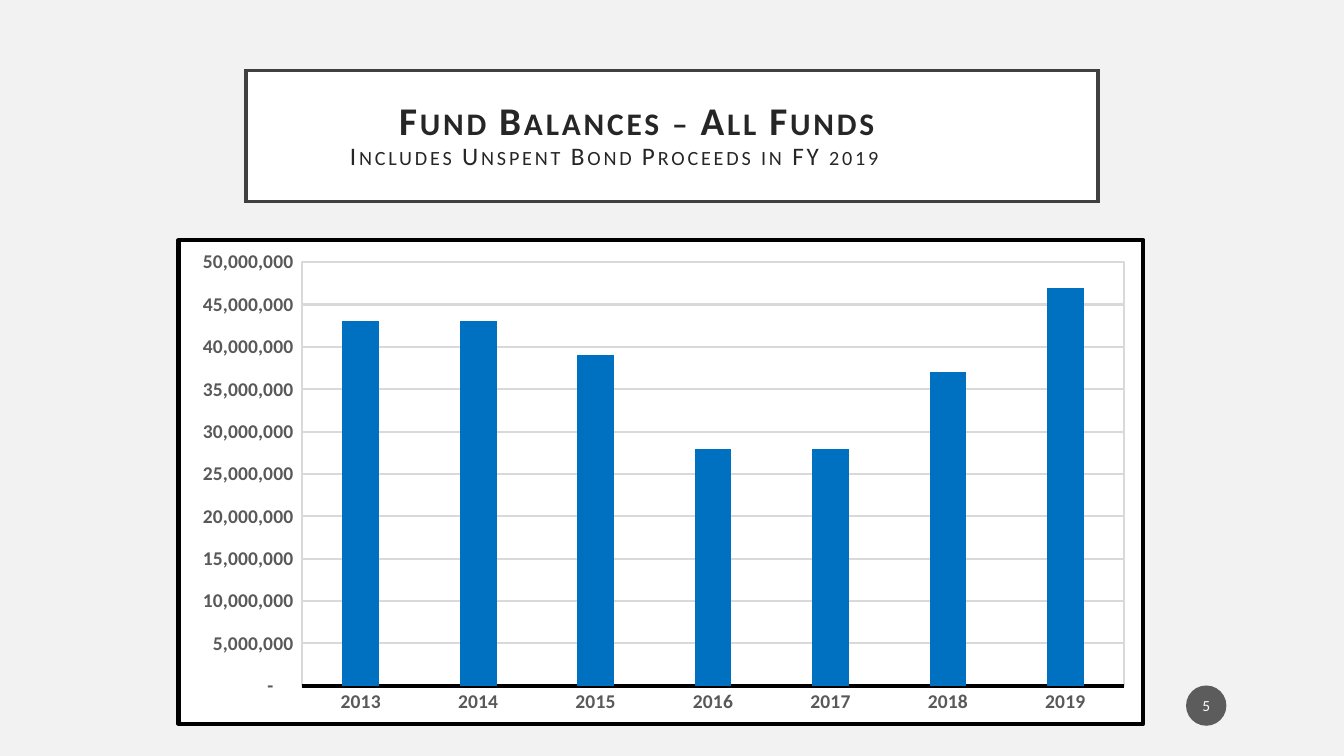
"""Build the fund balances slide: framed title, column chart and page badge."""
import lxml.etree
import pptx
import pptx.chart.data
import pptx.dml.color
import pptx.enum.chart
import pptx.enum.shapes
import pptx.enum.text
import pptx.oxml
import pptx.oxml.ns
import pptx.util

RGB = pptx.dml.color.RGBColor
Pt = pptx.util.Pt
Inch = pptx.util.Inches
qn = pptx.oxml.ns.qn
WHITE = RGB(0xFF, 0xFF, 0xFF)
BLACK = RGB(0, 0, 0)
PALE = RGB(0xF2, 0xF2, 0xF2)
FRAME = RGB(0x40, 0x40, 0x40)
INK = RGB(0x26, 0x26, 0x26)
GREY = RGB(0x59, 0x59, 0x59)
GRID = RGB(0xD9, 0xD9, 0xD9)
BLUE = RGB(0, 0x70, 0xC0)
BADGE = RGB(0x1D, 0x1D, 0x1D)
FACE = "Calibri"

deck = pptx.Presentation()
deck.slide_width, deck.slide_height = Inch(13.33), Inch(7.5)
slide = deck.slides.add_slide(deck.slide_layouts[6])
slide.background.fill.solid()
slide.background.fill.fore_color.rgb = PALE


def place(*parts):
    """Turn percent shares of the slide into left, top, width and height."""
    sides = (deck.slide_width, deck.slide_height) * 2
    return [round(side * part / 100) for side, part in zip(sides, parts)]


def style(font, size, color, bold):
    """Set face, size, colour and weight of a font."""
    font.name, font.size, font.bold = FACE, Pt(size), bold
    font.color.rgb = color


kinds = pptx.enum.shapes.MSO_SHAPE
mid = pptx.enum.text.MSO_ANCHOR.MIDDLE
center = pptx.enum.text.PP_ALIGN.CENTER

title = slide.shapes.add_shape(kinds.RECTANGLE, *place(18.3, 9.33, 63.4, 17.33))
title.shadow.inherit = False
title.fill.solid()
title.fill.fore_color.rgb = WHITE
title.line.color.rgb = FRAME
title.line.width = Pt(2.5)
edge = title._element.spPr.find(qn("a:ln"))
lxml.etree.SubElement(edge, qn("a:miter")).set("lim", "800000")
frame = title.text_frame
frame.word_wrap = True
frame.vertical_anchor = mid
frame.margin_left = frame.margin_right = Inch(0.2)
frame.margin_top = frame.margin_bottom = Inch(0.2)
lines = [("Fund Balances – All Funds", 28, True),
         ("Includes Unspent Bond Proceeds in FY 2019", 18, False)]
for row, (words, size, bold) in enumerate(lines):
    para = frame.add_paragraph() if row else frame.paragraphs[0]
    para.text = words
    para.alignment = center
    para.line_spacing = 0.9
    style(para.font, size, INK, bold)
    para.font._element.set("cap", "small")
    para.font._element.set("spc", "200")

data = pptx.chart.data.CategoryChartData()
data.categories = [str(year) for year in range(2013, 2020)]
data.add_series("Series 1", [
    million * 1000000 for million in (43, 43, 39, 28, 28, 37, 47)])
chart = slide.shapes.add_chart(
    pptx.enum.chart.XL_CHART_TYPE.COLUMN_CLUSTERED,
    *place(13.13, 31.47, 72.1, 64.53), data).chart
chart.has_legend = False
chart.has_title = False
style(chart.font, 10, BLACK, False)
plot = chart.plots[0]
plot.gap_width = 219
plot.vary_by_categories = False
bars = plot.series[0].format.fill
bars.solid()
bars.fore_color.rgb = BLUE

cats, vals = chart.category_axis, chart.value_axis
for axis in (cats, vals):
    axis.major_tick_mark = axis.minor_tick_mark = pptx.enum.chart.XL_TICK_MARK.NONE
    style(axis.tick_labels.font, 14, GREY, True)
cats.format.line.color.rgb = BLACK
cats.format.line.width = Pt(2.75)
vals.format.line.fill.background()
vals.minimum_scale, vals.maximum_scale, vals.major_unit = 0, 50000000, 5000000
vals.major_gridlines.format.line.color.rgb = GRID
vals.major_gridlines.format.line.width = Pt(1.5)
vals.tick_labels.number_format = '_(* #,##0_);_(* \\(#,##0\\);_(* "-"??_);_(@_)'
vals.tick_labels.number_format_is_linked = False

outer = chart._chartSpace.find(qn("c:chart"))
area = outer.find(qn("c:plotArea"))
names = pptx.oxml.ns.nsdecls("c", "a")
layout = pptx.oxml.parse_xml(f"<c:layout {names}><c:manualLayout/></c:layout>")
rules = [("layoutTarget", "inner"), ("xMode", "edge"), ("yMode", "edge")]
shares = [("x", 12.8), ("y", 4.6), ("w", 85.2), ("h", 87.6)]
rules += [(tag, f"{share / 100:.3f}") for tag, share in shares]
for tag, val in rules:
    lxml.etree.SubElement(layout[0], qn("c:" + tag)).set("val", val)
for old in area.findall(qn("c:layout")):
    area.remove(old)
area.insert(0, layout)
for add, color, width in [(area.append, GRID, 1.5), (outer.addnext, BLACK, 3)]:
    add(pptx.oxml.parse_xml(
        f'<c:spPr {names}><a:solidFill><a:srgbClr val="{WHITE}"/></a:solidFill>'
        f'<a:ln w="{Pt(width)}"><a:solidFill><a:srgbClr val="{color}"/>'
        f'</a:solidFill></a:ln></c:spPr>'))

badge = slide.shapes.add_shape(kinds.OVAL, *place(88.25, 90.67, 3, 5.33))
badge.shadow.inherit = False
badge.fill.solid()
badge.fill.fore_color.rgb = BADGE
tint = badge._element.spPr.find(qn("a:solidFill"))[0]
lxml.etree.SubElement(tint, qn("a:alpha")).set("val", "70000")
badge.line.fill.background()
frame = badge.text_frame
frame.vertical_anchor = mid
frame.margin_left = frame.margin_right = Inch(0.02)
para = frame.paragraphs[0]
para.text = "5"
para.alignment = center
style(para.font, 11, WHITE, False)

deck.save("out.pptx")
